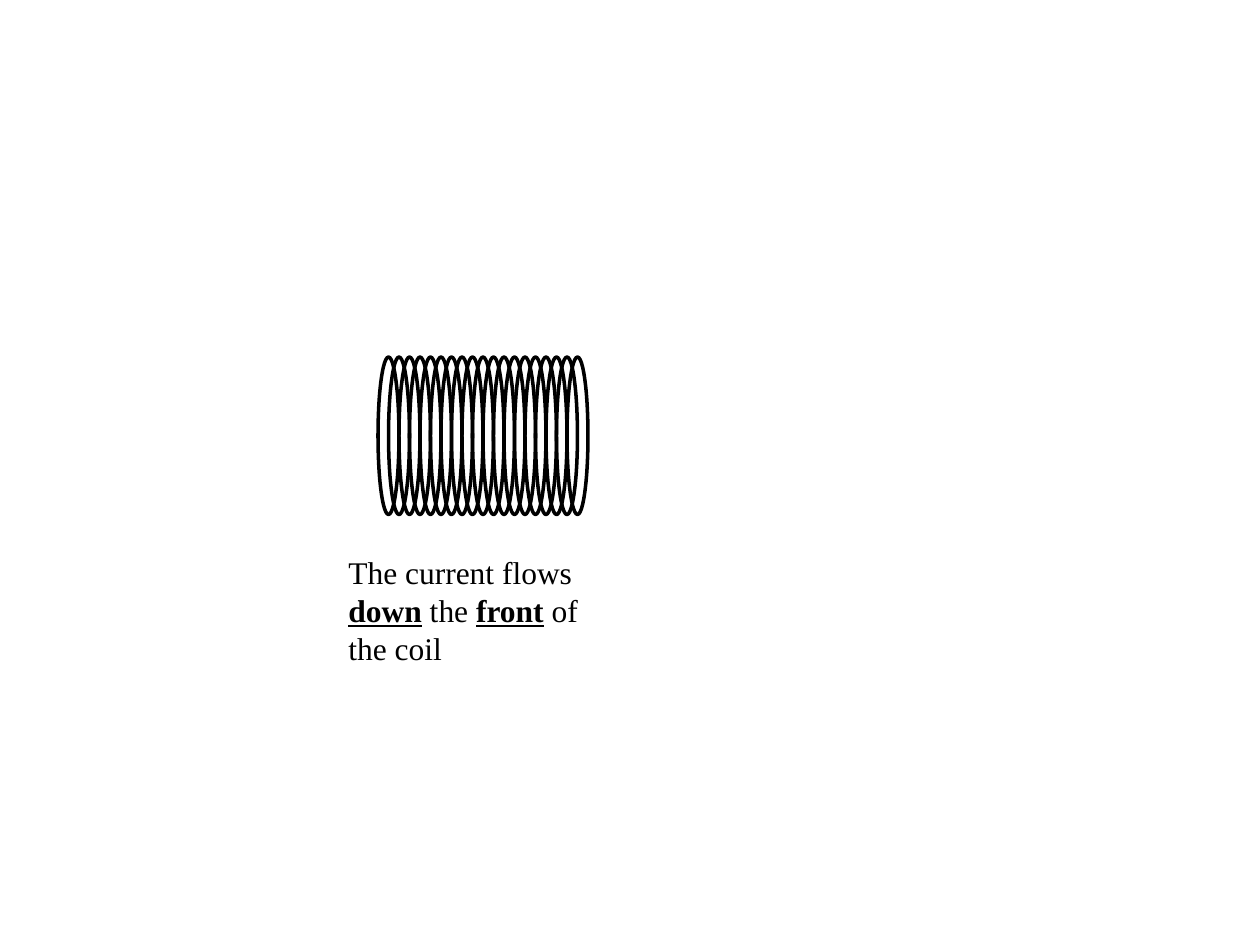
from pptx import Presentation
from pptx import util as u
from pptx.dml.color import RGBColor
from pptx.enum import shapes, text

PX = 9525  # EMU per px, 96 px to the inch


def px(*lengths):
    """Turn px lengths into EMU."""
    return [u.Emu(n * PX) for n in lengths]


def rgb(color):
    return RGBColor.from_string(color)


prs = Presentation()
prs.slide_width, prs.slide_height = px(960, 720)
s = prs.slides.add_slide(prs.slide_layouts[6])

# Coil: equal turns, each overlapping half of the one before
TURNS, TURN_W, TURN_H = 19, 16, 120
coil = s.shapes.add_group_shape()
for i in range(TURNS):
    sp = coil.shapes.add_shape(
        shapes.MSO_SHAPE.OVAL, *px(288 + i * TURN_W // 2, 272, TURN_W, TURN_H))
    sp.shadow.inherit = False
    sp.fill.background()
    sp.line.color.rgb = rgb("000000")
    sp.line.width = u.Pt(2)

# Caption
caption = s.shapes.add_textbox(*px(256, 417, 224, 97))
tf = caption.text_frame
tf.word_wrap = True
tf.auto_size = text.MSO_AUTO_SIZE.SHAPE_TO_FIT_TEXT
p = tf.paragraphs[0]
plain = {"name": "Times New Roman", "size": u.Pt(18)}
strong = {**plain, "bold": True, "underline": True}
for words, style in [
    ("The current flows ", plain),
    ("down", strong),
    (" the ", plain),
    ("front", strong),
    (" of the coil", plain),
]:
    r = p.add_run()
    r.text = words
    for key, value in style.items():
        setattr(r.font, key, value)
    r.font.color.rgb = rgb("000000")

prs.save("out.pptx")
